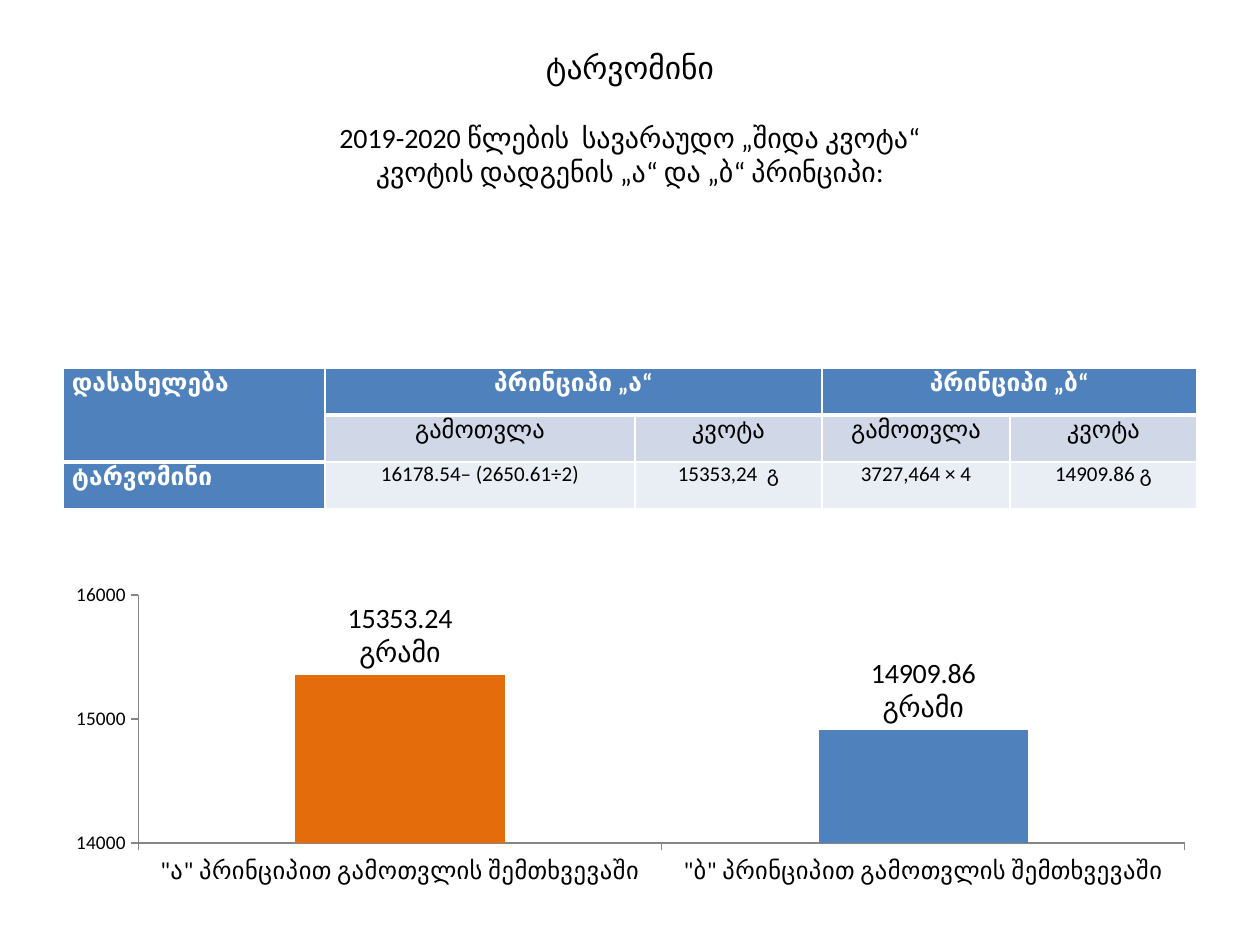
from dataclasses import dataclass

from lxml import etree
from pptx import Presentation
from pptx.chart import data
from pptx.dml.color import RGBColor
from pptx.enum import chart as ch, text
from pptx.oxml import ns
from pptx.util import Pt

SCALE = 914400 / 126


@dataclass(frozen=True)
class Theme:
    """Hold the colours and type sizes of the slide."""
    font: str = "Calibri"
    ink: str = "000000"
    white: str = "FFFFFF"
    blue: str = "4F81BD"
    orange: str = "E46C0A"
    band: str = "D0D8E8"
    pale: str = "E9EDF4"
    axis: str = "868686"
    head: int = 18
    body: int = 16
    label: int = 14
    cell: int = 12
    tick: int = 11


THEME = Theme()
DRUG = "ტარვომინი"
ROWS = [
    ["დასახელება", "პრინციპი „ა“", "", "პრინციპი „ბ“", ""],
    ["", "გამოთვლა", "კვოტა", "გამოთვლა", "კვოტა"],
    [DRUG, "16178.54– (2650.61÷2)", "15353,24  გ", "3727,464 × 4", "14909.86 გ"],
]
WIDTHS = [262, 310, 187, 188, 187]
QUOTAS = {
    '"ა" პრინციპით გამოთვლის შემთხვევაში': 15353.24,
    '"ბ" პრინციპით გამოთვლის შემთხვევაში': 14909.86,
}


def px(n):
    """Turn pixels into EMU."""
    return round(n * SCALE)


def rgb(code):
    """Turn a hex code into a colour."""
    return RGBColor.from_string(code)


def style(font, size, color=THEME.ink, bold=False):
    """Set the face, size, colour and weight of a font."""
    font.name, font.size, font.bold = THEME.font, Pt(size), bold
    font.color.rgb = rgb(color)


def add_title(slide, box):
    """Place the drug name above the two-line subtitle."""
    title = slide.shapes.title
    title.left, title.top, title.width, title.height = map(px, box)
    frame = title.text_frame
    frame.word_wrap = True
    frame.auto_size = text.MSO_AUTO_SIZE.NONE
    frame.vertical_anchor = text.MSO_ANCHOR.MIDDLE
    frame.margin_bottom = px(40)
    frame.text = (f"{DRUG}\n2019-2020 წლების  სავარაუდო „შიდა კვოტა“\n"
                  "კვოტის დადგენის „ა“ და „ბ“ პრინციპი:")
    for para, size in zip(frame.paragraphs, (THEME.head, THEME.body, THEME.body)):
        para.alignment = text.PP_ALIGN.CENTER
        para.space_before = para.space_after = Pt(0)
        style(para.runs[0].font, size)
    frame.paragraphs[0].space_after = Pt(20)


def edge(cell, base):
    """Draw white borders round a cell, with its own bottom width."""
    props = cell._tc.get_or_add_tcPr()
    for side, width in zip("LRTB", (1, 1, 1, base)):
        line = etree.SubElement(props, ns.qn(f"a:ln{side}"), w=str(Pt(width)))
        fill = etree.SubElement(line, ns.qn("a:solidFill"))
        etree.SubElement(fill, ns.qn("a:srgbClr"), val=THEME.white)


def add_grid(slide, box):
    """Place the quota table with its merged heads."""
    grid = slide.shapes.add_table(len(ROWS), len(WIDTHS), *map(px, box)).table
    for col, width in zip(grid.columns, WIDTHS):
        col.width = px(width)
    for r, row in enumerate(ROWS):
        grid.rows[r].height = px(box[3] / len(ROWS))
        for c, words in enumerate(row):
            cell = grid.cell(r, c)
            head = r == 0 or c == 0
            edge(cell, 3 if r == 0 or (r == 1 and c == 0) else 1)
            cell.fill.solid()
            cell.fill.fore_color.rgb = rgb(
                THEME.blue if head else (THEME.band if r == 1 else THEME.pale))
            cell.margin_left = cell.margin_right = px(9)
            cell.margin_top = cell.margin_bottom = 0
            para = cell.text_frame.paragraphs[0]
            para.text = words
            para.alignment = text.PP_ALIGN.CENTER if c else text.PP_ALIGN.JUSTIFY
            size = THEME.label if head or r == 1 else THEME.cell
            for run in para.runs:
                style(run.font, size, THEME.white if head else THEME.ink, head)
    for start, end in (((0, 0), (1, 0)), ((0, 1), (0, 2)), ((0, 3), (0, 4))):
        grid.cell(*start).merge(grid.cell(*end))


def add_bars(slide, box):
    """Place the column chart that compares the two quotas."""
    feed = data.CategoryChartData()
    feed.categories = list(QUOTAS)
    feed.add_series("Series 1", list(QUOTAS.values()))
    kind = ch.XL_CHART_TYPE.COLUMN_CLUSTERED
    chart = slide.shapes.add_chart(kind, *map(px, box), feed).chart
    chart.has_legend = chart.has_title = False
    style(chart.font, THEME.tick)
    for axis, size in ((chart.category_axis, THEME.label), (chart.value_axis, THEME.tick)):
        axis.has_major_gridlines = False
        axis.major_tick_mark = ch.XL_TICK_MARK.OUTSIDE
        axis.format.line.color.rgb = rgb(THEME.axis)
        style(axis.tick_labels.font, size)
    scale = chart.value_axis
    scale.minimum_scale, scale.maximum_scale, scale.major_unit = 14000, 16000, 1000
    plot = chart.plots[0]
    plot.gap_width, plot.vary_by_categories = 150, False
    bars = plot.series[0]
    bars.format.fill.solid()
    bars.format.fill.fore_color.rgb = rgb(THEME.blue)
    first = bars.points[0].format.fill
    first.solid()
    first.fore_color.rgb = rgb(THEME.orange)
    bars.data_labels.show_value = True
    style(bars.data_labels.font, THEME.body)
    for i, value in enumerate(QUOTAS.values()):
        label = bars.points[i].data_label
        label.text_frame.text = f"{value} გრამი"
        style(label.text_frame.paragraphs[0].runs[0].font, THEME.body)
        label.position = ch.XL_LABEL_POSITION.OUTSIDE_END


def main():
    """Build and save the slide."""
    deck = Presentation()
    deck.slide_width, deck.slide_height = px(1260), px(945)
    slide = deck.slides.add_slide(deck.slide_layouts[5])
    add_title(slide, (63, 38, 1134, 193))
    add_grid(slide, (63, 368, 1134, 141))
    add_bars(slide, (53, 577, 1155, 315))
    deck.save("out.pptx")


if __name__ == "__main__":
    main()
